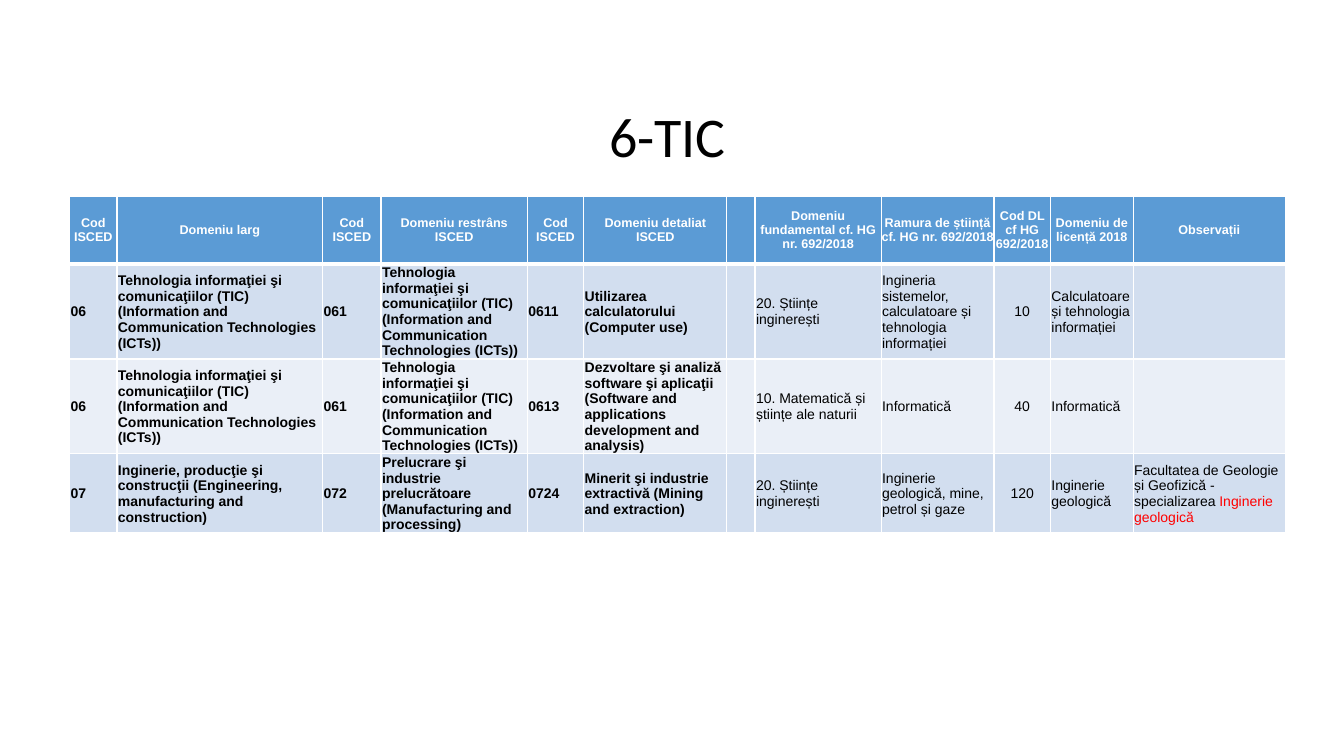
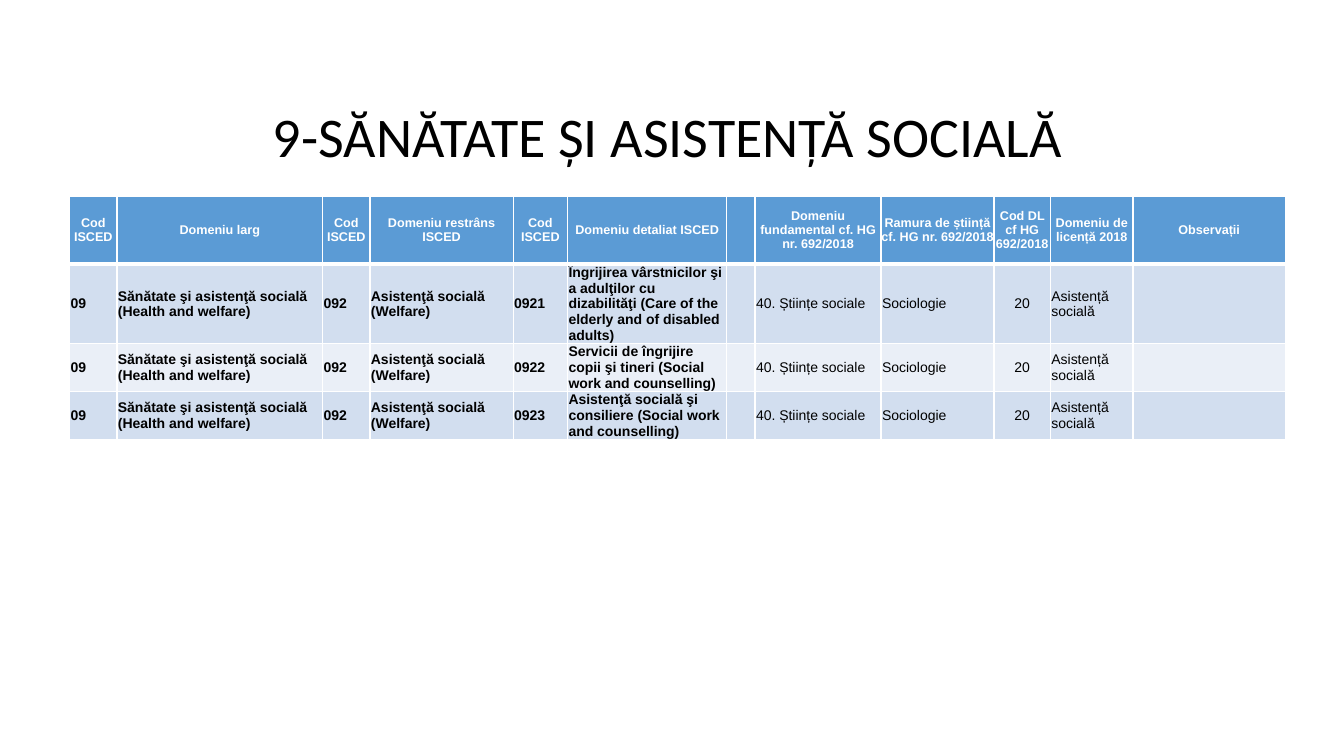
import pptx
import pptx.util
import pptx.dml.color
import pptx.enum.text
import lxml.etree

Inch, Pt = pptx.util.Inches, pptx.util.Pt
Color = pptx.dml.color.RGBColor.from_string
Align = pptx.enum.text.PP_ALIGN
MID = pptx.enum.text.MSO_ANCHOR.MIDDLE

# Theme shared by both slides
THEME = {
    "head": "5B9BD5", "bands": ("D2DEEF", "EAEFF7"), "line": "FFFFFF",
    "light": "FFFFFF", "dark": "000000", "mark": "FF0000",
    "title font": "Calibri", "font": "Arial",
    "title size": 40, "head size": 9, "size": 10,
    "thin": 1, "thick": 3,
}
TITLE = {"left": 0.97, "top": 1.02, "width": 11.5, "height": 0.72}
LEFT, TOP, HEAD = 0.69, 1.95, 0.67
CODES, NUMBER, BOLD = (0, 2, 4), 9, 6

# Content
HEADS = ("Cod ISCED", "Domeniu larg", "Cod ISCED", "Domeniu restrâns ISCED",
         "Cod ISCED", "Domeniu detaliat ISCED", "",
         "Domeniu fundamental cf. HG nr. 692/2018",
         "Ramura de știință cf. HG nr. 692/2018", "Cod DL cf HG 692/2018",
         "Domeniu de licență 2018", "Observații")
ICT = ("Tehnologia informaţiei şi comunicaţiilor (TIC) "
       "(Information and Communication Technologies (ICTs))")
TECH = ("06", ICT, "061", ICT)
CARE = ("09", "Sănătate şi asistenţă socială (Health and welfare)",
        "092", "Asistenţă socială (Welfare)")
SOCIAL = ("", "40. Științe sociale", "Sociologie", "20", "Asistență socială", "")
ENDS = (0.28, 1.25, 1.12, 0.56, 0.82, 1.51)

SLIDES = [
    {"title": "6-TIC",
     "cols": (0.47, 2.04, 0.58, 1.45, 0.56, 1.42) + ENDS,
     "heights": (0.94, 0.94, 0.78),
     "rows": [
         TECH + ("0611", "Utilizarea calculatorului (Computer use)", "",
                 "20. Științe inginerești",
                 "Ingineria sistemelor, calculatoare și tehnologia informației",
                 "10", "Calculatoare și tehnologia informației", ""),
         TECH + ("0613", "Dezvoltare şi analiză software şi aplicaţii "
                 "(Software and applications development and analysis)", "",
                 "10. Matematică și științe ale naturii", "Informatică",
                 "40", "Informatică", ""),
         ("07", "Inginerie, producţie şi construcţii "
          "(Engineering, manufacturing and construction)",
          "072", "Prelucrare şi industrie prelucrătoare "
          "(Manufacturing and processing)",
          "0724", "Minerit şi industrie extractivă (Mining and extraction)", "",
          "20. Științe inginerești", "Inginerie geologică, mine, petrol și gaze",
          "120", "Inginerie geologică",
          ("Facultatea de Geologie și Geofizică - specializarea ",
           "Inginerie geologică")),
     ]},
    {"title": "9-SĂNĂTATE ȘI ASISTENȚĂ SOCIALĂ",
     "cols": (0.47, 2.04, 0.47, 1.42, 0.54, 1.58) + ENDS,
     "heights": (0.78, 0.47, 0.47),
     "rows": [CARE + pair + SOCIAL for pair in (
         ("0921", "Îngrijirea vârstnicilor şi a adulţilor cu dizabilităţi "
          "(Care of the elderly and of disabled adults)"),
         ("0922", "Servicii de îngrijire copii şi tineri "
          "(Social work and counselling)"),
         ("0923", "Asistenţă socială şi consiliere "
          "(Social work and counselling)"))]},
]


def apply(thing, **values):
    for name, value in values.items():
        setattr(thing, name, value)


def style(font, face, size, color, bold=False):
    apply(font, name=face, size=Pt(size), bold=bold)
    font.color.rgb = Color(color)


def border(cell, row):
    """Draw white edges; the edge below the header is thick."""
    props = cell._tc.get_or_add_tcPr()
    space = "{%s}" % props.nsmap["a"]
    for side in "LRTB":
        thick = (row, side) in ((0, "B"), (1, "T"))
        width = THEME["thick" if thick else "thin"]
        line = lxml.etree.SubElement(props, space + "ln" + side, w=str(Pt(width)))
        fill = lxml.etree.SubElement(line, space + "solidFill")
        lxml.etree.SubElement(fill, space + "srgbClr", val=THEME["line"])


def fill_cell(cell, row, col, text):
    top = row == 0
    pad = Inch(0 if top else 0.01)
    apply(cell, margin_left=pad, margin_right=pad, margin_top=pad,
          margin_bottom=0, vertical_anchor=MID)
    border(cell, row)
    cell.fill.solid()
    shade = THEME["head"] if top else THEME["bands"][(row - 1) % 2]
    cell.fill.fore_color.rgb = Color(shade)

    # Text: a second run is marked in red
    para = cell.text_frame.paragraphs[0]
    para.alignment = (Align.CENTER if top or col == NUMBER else
                      Align.JUSTIFY if col in CODES else Align.LEFT)
    size = THEME["head size" if top else "size"]
    color = THEME["light" if top else "dark"]
    style(para.font, THEME["font"], size, color)
    parts = (text,) if isinstance(text, str) else text
    for part, tone in zip(parts, (color, THEME["mark"])):
        if part:
            run = para.add_run()
            run.text = part
            style(run.font, THEME["font"], size, tone, top or col < BOLD)


def add_title(slide, text):
    title = slide.shapes.title
    apply(title, **{name: Inch(value) for name, value in TITLE.items()})
    frame = title.text_frame
    apply(frame, text=text, word_wrap=True, vertical_anchor=MID,
          margin_right=Inch(0.3), auto_size=pptx.enum.text.MSO_AUTO_SIZE.NONE)
    para = frame.paragraphs[0]
    apply(para, alignment=Align.CENTER, line_spacing=0.9)
    style(para.runs[0].font, THEME["title font"], THEME["title size"], THEME["dark"])


def add_grid(slide, data):
    rows = [HEADS] + data["rows"]
    tall = (HEAD,) + data["heights"]
    wide = data["cols"]
    table = slide.shapes.add_table(
        len(rows), len(wide), Inch(LEFT), Inch(TOP),
        Inch(sum(wide)), Inch(sum(tall))).table
    apply(table, first_row=False, horz_banding=False)
    for col, width in zip(table.columns, wide):
        col.width = Inch(width)
    for row, height in zip(table.rows, tall):
        row.height = Inch(height)
    for r, row in enumerate(rows):
        for c, text in enumerate(row):
            fill_cell(table.cell(r, c), r, c, text)


def main():
    deck = pptx.Presentation()
    apply(deck, slide_width=Inch(13.33), slide_height=Inch(7.5))
    for data in SLIDES:
        slide = deck.slides.add_slide(deck.slide_layouts[5])
        add_title(slide, data["title"])
        add_grid(slide, data)
    deck.save("out.pptx")


if __name__ == "__main__":
    main()
